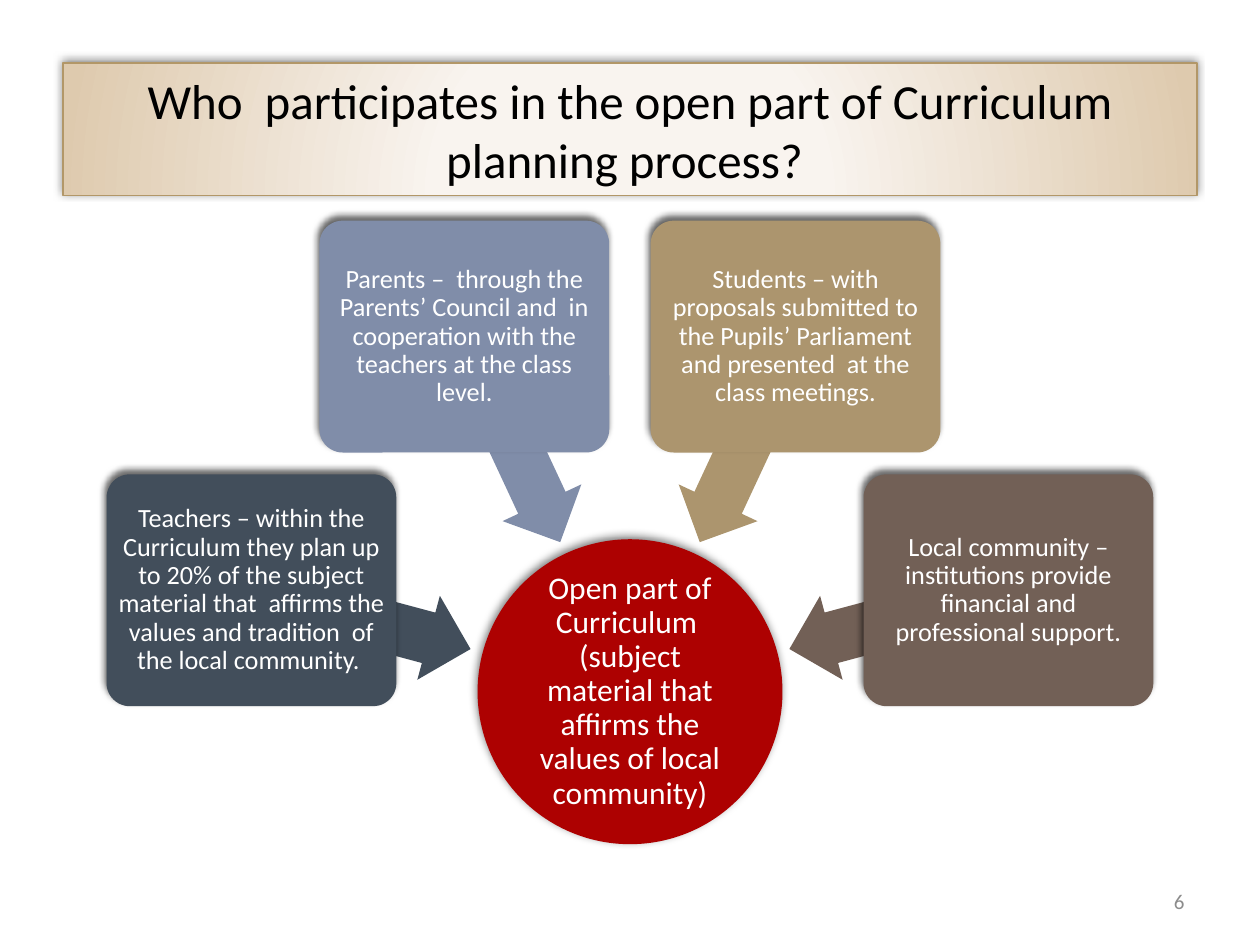
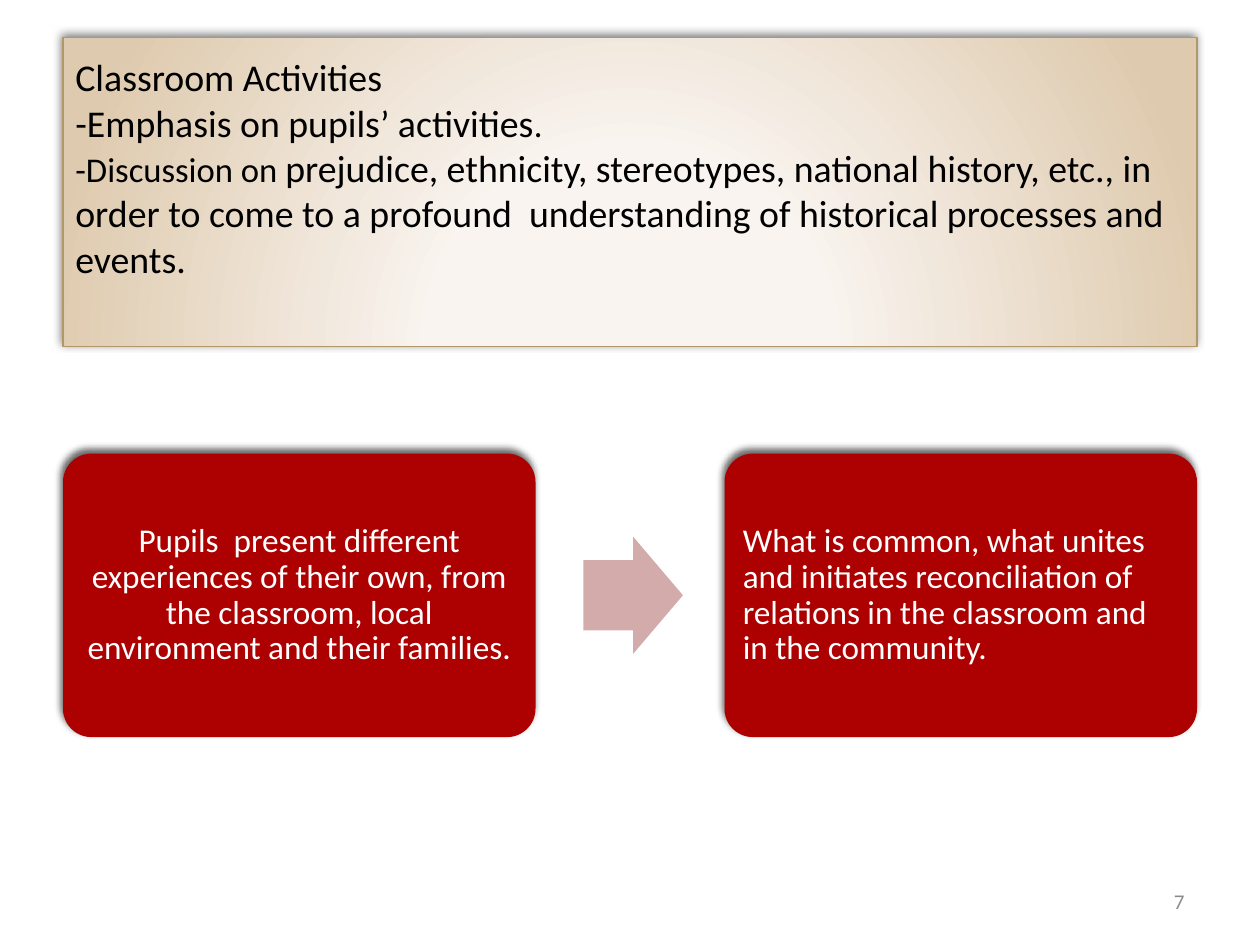
from math import cos, radians, sin

from lxml import etree
from pptx import Presentation
from pptx import util as u
from pptx.dml.color import RGBColor
from pptx.enum import shapes, text
from pptx.oxml import parse_xml
from pptx.oxml.ns import nsdecls, qn

SHAPE = shapes.MSO_SHAPE
ALIGN = text.PP_ALIGN
ANCHOR = text.MSO_ANCHOR

FONT = "Calibri"
RED, WHITE, BLACK, GREY = "AD0101", "FFFFFF", "000000", "8C8C8C"
BAND_LINE = "B29768"
BAND_STOPS = [(0, "FBF7F2"), (34, "F9F4EF"), (100, "DECAAE")]
SOFT_SHADOW = {"alpha": 50, "blur": 5, "distance": 2}
CARD_SHADOW = {"alpha": 60, "blur": 4, "distance": 3}
SHADOW_ANGLE = 245

HUB_X, HUB_Y, HUB_SIZE = 5, 5.49, 2.42
ARROW_REACH, CARD_REACH = 2.21, 3.11
PARTICIPANTS = [
    (15, "726056", "Local community –institutions provide financial and "
                   "professional support."),
    (65, "AC956E", "Students – with proposals submitted to the Pupils’ Parliament "
                   "and presented  at the class meetings."),
    (115, "808DA9", "Parents –  through the Parents’ Council and  in cooperation "
                    "with the teachers at the class level."),
    (165, "424E5B", "Teachers – within the Curriculum they plan up to 20% of the "
                    "subject material that  affirms the values and tradition  of "
                    "the local community. "),
]


def color(value):
    return RGBColor.from_string(value)


def centred(x, y, width, height):
    """Return left, top, width, height of a box around a centre point."""
    return x - width / 2, y - height / 2, width, height


def around_hub(angle, reach):
    turn = radians(angle)
    return HUB_X + reach * cos(turn), HUB_Y - reach * sin(turn)


class SlideMaker:
    """Holds the deck, its style and the slide being filled."""

    def __init__(self):
        self.deck = Presentation()
        self.deck.slide_width, self.deck.slide_height = u.Inches(10), u.Inches(7.5)
        self.page = None

    def start_page(self, number):
        self.page = self.deck.slides.add_slide(self.deck.slide_layouts[6])
        box = self.page.shapes.add_textbox(*map(u.Inches, (7.17, 6.95, 2.33, 0.4)))
        self.add_text(box, [[(str(number), 12)]], ink=GREY, align=ALIGN.RIGHT)

    def add_text(self, shape, lines, ink=WHITE, align=ALIGN.CENTER, spacing=1,
                 margin=None, **frame_format):
        """Fill a shape with lines, each a list of (words, size) spans."""
        frame = shape.text_frame
        settings = {"word_wrap": True, "vertical_anchor": ANCHOR.MIDDLE}
        if margin is not None:
            sides = ("left", "top", "right", "bottom")
            settings |= {f"margin_{side}": u.Inches(margin) for side in sides}
        for name, value in (settings | frame_format).items():
            setattr(frame, name, value)
        for index, line in enumerate(lines):
            para = frame.add_paragraph() if index else frame.paragraphs[0]
            para.alignment, para.line_spacing = align, spacing
            for words, size in line:
                span = para.add_run()
                span.text = words
                for name, value in {"name": FONT, "size": u.Pt(size)}.items():
                    setattr(span.font, name, value)
                span.font.color.rgb = color(ink)

    def add_shadow(self, shape, alpha, blur, distance):
        effects = shape._element.spPr.find(qn("a:effectLst"))
        shadow = etree.SubElement(
            effects, qn("a:outerShdw"), blurRad=str(u.Pt(blur)),
            dist=str(u.Pt(distance)), dir=str(SHADOW_ANGLE * 60000), rotWithShape="0")
        tint = etree.SubElement(shadow, qn("a:srgbClr"), val=BLACK)
        etree.SubElement(tint, qn("a:alpha"), val=str(alpha * 1000))

    def add_shape(self, kind, place, fill=None, shadow=None, line=None,
                  adjustments=(), rotation=0):
        shape = self.page.shapes.add_shape(kind, *map(u.Inches, place))
        shape.rotation = rotation
        for index, value in enumerate(adjustments):
            shape.adjustments[index] = value
        if fill:
            shape.fill.solid()
            shape.fill.fore_color.rgb = color(fill)
        else:
            shape.fill.background()
        if line:
            shape.line.color.rgb = color(line)
            shape.line.width = u.Pt(0.75)
        else:
            shape.line.fill.background()
        shape.shadow.inherit = False
        if shadow:
            self.add_shadow(shape, **shadow)
        return shape

    def add_title_band(self, top, height, lines, **text_format):
        band = self.add_shape(SHAPE.RECTANGLE, (0.5, top, 9, height),
                              shadow=SOFT_SHADOW, line=BAND_LINE)
        stops = "".join(
            f'<a:gs pos="{position * 1000}"><a:srgbClr val="{tint}"/></a:gs>'
            for position, tint in BAND_STOPS)
        gradient = parse_xml(
            f'<a:gradFill {nsdecls("a")} rotWithShape="1"><a:gsLst>{stops}</a:gsLst>'
            '<a:path path="circle"><a:fillToRect l="50000" t="155000" r="50000" '
            'b="-55000"/></a:path></a:gradFill>')
        properties = band._element.spPr
        properties.replace(properties.find(qn("a:noFill")), gradient)
        self.add_text(band, lines, ink=BLACK, **text_format)

    def add_card(self, place, fill, words, size, margin, align=ALIGN.CENTER):
        card = self.add_shape(SHAPE.ROUNDED_RECTANGLE, place, fill, CARD_SHADOW,
                              adjustments=[0.1])
        self.add_text(card, [[(words, size)]], align=align, spacing=0.9, margin=margin)

    def add_arrow(self, kind, place, fill, rotation=0):
        self.add_shape(kind, place, fill, adjustments=[0.6, 0.5], rotation=rotation)


def build_participants(maker):
    maker.start_page(6)
    maker.add_title_band(0.5, 1.05, [[(
        "Who  participates in the open part of Curriculum planning process? ", 28)]])
    hub = maker.add_shape(SHAPE.OVAL, centred(HUB_X, HUB_Y, HUB_SIZE, HUB_SIZE),
                          RED, SOFT_SHADOW)
    maker.add_text(hub, [[("Open part of Curriculum  (subject material that affirms "
                           "the values of local community)", 18)]],
                   spacing=0.9, margin=0.01)
    for angle, fill, words in PARTICIPANTS:
        maker.add_arrow(SHAPE.LEFT_ARROW,
                        centred(*around_hub(angle, ARROW_REACH), 1.8, 0.69),
                        fill, rotation=360 - angle)
        maker.add_card(centred(*around_hub(angle, CARD_REACH), 2.3, 1.84),
                       fill, words, 15, margin=0.03)


def build_activities(maker):
    maker.start_page(7)
    maker.add_card((0.5, 3.6, 3.75, 2.25), RED,
                   "Pupils  present different experiences of their own, from the "
                   "classroom, local environment and their families.", 19, 0.08)
    maker.add_arrow(SHAPE.RIGHT_ARROW, (4.63, 4.26, 0.79, 0.93), "D3ABAB")
    maker.add_card((5.75, 3.6, 3.75, 2.25), RED,
                   "What is common, what unites and initiates reconciliation of "
                   "relations in the classroom and in the community.", 19, 0.08,
                   align=ALIGN.LEFT)
    maker.add_title_band(0.3, 2.45, [
        [("Classroom Activities", 21.6)],
        [("-Emphasis on pupils’ activities", 21.6), (".", 19.8)],
        [("-Discussion on ", 19.8),
         ("prejudice, ethnicity, stereotypes, national history, etc., in order to "
          "come to a profound  understanding of historical processes and  events.",
          21.6)],
    ], align=ALIGN.LEFT, vertical_anchor=ANCHOR.TOP, margin_top=u.Inches(0.13))


def main():
    maker = SlideMaker()
    build_participants(maker)
    build_activities(maker)
    maker.deck.save("out.pptx")


if __name__ == "__main__":
    main()
